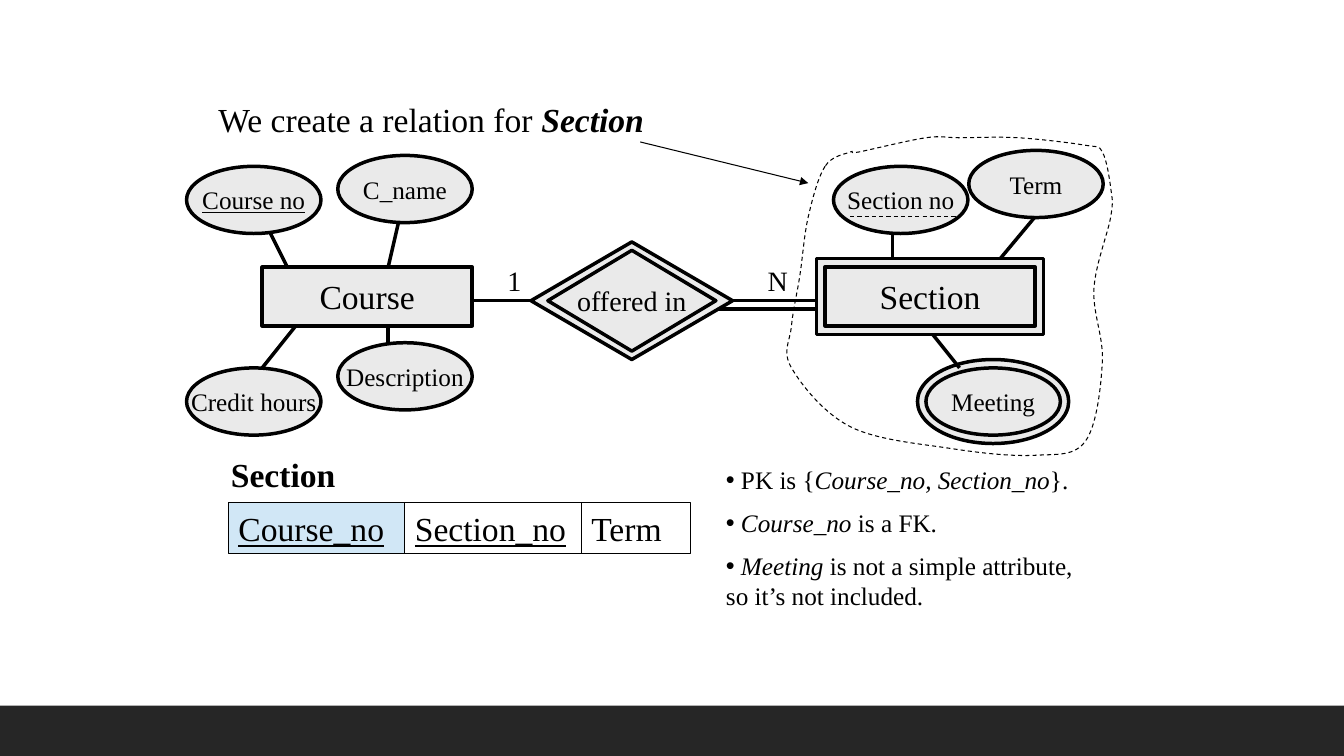
"""Build a slide that maps a weak entity type to a relation."""
from dataclasses import dataclass

from lxml.etree import SubElement
from pptx import Presentation
from pptx.dml.color import RGBColor
from pptx.enum.dml import MSO_LINE
from pptx.enum.shapes import MSO_CONNECTOR, MSO_SHAPE
from pptx.enum.text import MSO_ANCHOR, MSO_AUTO_SIZE, PP_ALIGN
from pptx.oxml.ns import qn
from pptx.util import Inches, Pt


@dataclass(frozen=True)
class Theme:
    """Colours, type sizes and line weights of the slide."""
    font: str = "Times New Roman"
    ink: RGBColor = RGBColor(0, 0, 0)
    node: RGBColor = RGBColor(0xEA, 0xEA, 0xEA)
    key: RGBColor = RGBColor(0xD1, 0xE7, 0xF6)
    bar: RGBColor = RGBColor(0x26, 0x26, 0x26)
    large: int = 24
    medium: int = 20
    small: int = 18
    heavy: float = 2.5
    thin: float = 0.75


THEME = Theme()
LEFT, TOP, CELLS_PER_INCH = 1.85, 1.65, 12
ENTITY, ATTRIBUTE, RELATIONSHIP = (25, 7), (16, 8), (20, 12)
BOUNDARY = [
    (76, 0), (74, 6), (73, 13), (72, 19), (72, 24), (79, 31), (91, 33.6),
    (101, 34.4), (107, 32.7), (109, 23.3), (108, 14.6), (110, 6), (110, 2.6),
    (109, -1.7), (107, -2.5), (99, -3.4), (92, -3.4), (88, -3.4), (80, -1.7),
    (79, -1.7),
]


def point(column, row):
    """Turn a grid position into slide lengths."""
    return Inches(LEFT + column / CELLS_PER_INCH), Inches(TOP + row / CELLS_PER_INCH)


def area(column, row, columns, rows):
    """Turn a grid rectangle into left, top, width and height."""
    return (*point(column, row),
            Inches(columns / CELLS_PER_INCH), Inches(rows / CELLS_PER_INCH))


def write(para, spans, size, align=PP_ALIGN.LEFT):
    """Fill a paragraph with (text, style letters) spans in one font."""
    para.alignment = align
    para.space_before = Pt(0)
    font = para.font
    font.name, font.size, font.color.rgb = THEME.font, Pt(size), THEME.ink
    for text, style in spans:
        span = para.add_run()
        span.text = text
        for letter, name in (("b", "bold"), ("i", "italic"), ("u", "underline")):
            if letter in style:
                setattr(span.font, name, True)


def wrap(box, anchor=MSO_ANCHOR.TOP):
    """Wrap the text of a box and anchor it."""
    frame = box.text_frame
    frame.word_wrap, frame.auto_size = True, MSO_AUTO_SIZE.NONE
    frame.vertical_anchor = anchor
    return frame


def place(box, bounds):
    """Move a placeholder to a grid rectangle."""
    box.left, box.top, box.width, box.height = area(*bounds)
    return wrap(box)


def paint(shape, fill, weight):
    """Give a shape a flat fill, or none, and a black outline."""
    shape.shadow.inherit = False
    if fill is None:
        shape.fill.background()
    else:
        shape.fill.solid()
        shape.fill.fore_color.rgb = fill
    shape.line.color.rgb, shape.line.width = THEME.ink, Pt(weight)


def add_label(page, bounds, text, size, style=""):
    """Add a free text label."""
    box = page.shapes.add_textbox(*area(*bounds))
    write(wrap(box).paragraphs[0], [(text, style)], size)


def add_node(page, kind, corner, extent, text, size, style="", double=(0, 0)):
    """Add a diagram node, with a wider outline behind it if it is double."""
    column, row = corner
    width, height = extent
    margins = [double, (0, 0)] if any(double) else [(0, 0)]
    for across, down in margins:
        node = page.shapes.add_shape(kind, *area(
            column - across, row - down, width + 2 * across, height + 2 * down))
        paint(node, THEME.node, THEME.heavy)
    frame = node.text_frame
    frame.word_wrap, frame.vertical_anchor = False, MSO_ANCHOR.MIDDLE
    write(frame.paragraphs[0], [(text, style)], size, PP_ALIGN.CENTER)


def add_link(page, start, end, weight=THEME.heavy, dashed=False, arrow=False):
    """Add a straight line between two grid points."""
    link = page.shapes.add_connector(MSO_CONNECTOR.STRAIGHT, *point(*start), *point(*end))
    link.line.color.rgb, link.line.width = THEME.ink, Pt(weight)
    if dashed:
        link.line.dash_style = MSO_LINE.DASH
    if arrow:
        SubElement(link.line._get_or_add_ln(), qn("a:tailEnd"), type="triangle")
    SubElement(link._element.spPr, qn("a:effectLst"))


def bend(outline):
    """Turn the segments of a closed outline into smooth curves."""
    geometry = outline._element.spPr
    knots = [(int(spot.get("x")), int(spot.get("y")))
             for spot in geometry.iter(qn("a:pt"))][:-1]
    count = len(knots)
    for index, segment in enumerate(list(geometry.iter(qn("a:lnTo")))):
        before, start, end, after = (
            knots[(index + shift) % count] for shift in (-1, 0, 1, 2))
        leave = [s + (e - b) / 6 for b, s, e in zip(before, start, end)]
        arrive = [e - (a - s) / 6 for s, e, a in zip(start, end, after)]
        curve = SubElement(segment.getparent(), qn("a:cubicBezTo"))
        for x, y in (leave, arrive, end):
            SubElement(curve, qn("a:pt"), x=str(round(x)), y=str(round(y)))
        segment.getparent().replace(segment, curve)


def add_boundary(page):
    """Add the dashed outline around the weak entity type."""
    first, *rest = [point(*knot) for knot in BOUNDARY]
    builder = page.shapes.build_freeform(*first)
    builder.add_line_segments([*rest, first], close=True)
    outline = builder.convert_to_shape()
    bend(outline)
    paint(outline, None, THEME.thin)
    outline.line.dash_style = MSO_LINE.DASH


def add_relation(page, corner, height, fields):
    """Add the relation schema as adjoining boxes, one for each field."""
    column, row = corner
    for text, width, style, colour in fields:
        field = page.shapes.add_shape(
            MSO_SHAPE.RECTANGLE, *area(column, row, width, height))
        paint(field, colour, THEME.thin)
        write(wrap(field, MSO_ANCHOR.BOTTOM).paragraphs[0], [(text, style)], THEME.large)
        column += width


def add_notes_list(box, items):
    """Fill the body placeholder with bulleted remarks."""
    frame = place(box, (63, 34.9, 46, 19.2))
    for index, spans in enumerate(items):
        para = frame.add_paragraph() if index else frame.paragraphs[0]
        properties = para._p.get_or_add_pPr()
        properties.set("marL", "0")
        properties.set("indent", "0")
        SubElement(properties, qn("a:buChar"), char="•")
        write(para, spans, THEME.small)
        para.space_before = Pt(9 if index else 0)


def add_bar(page, deck):
    """Add the dark band along the bottom of the slide."""
    height = deck.slide_height // 15
    bar = page.shapes.add_shape(MSO_SHAPE.RECTANGLE, 0, deck.slide_height - height,
                                deck.slide_width, height)
    paint(bar, THEME.bar, THEME.thin)
    bar.line.fill.background()


def add_diagram(page):
    """Add the entity-relationship diagram."""
    oval, small = MSO_SHAPE.OVAL, THEME.small
    for start, end in (((34, 16), (76, 16)), ((62, 17), (76, 17))):
        add_link(page, start, end)
    add_node(page, MSO_SHAPE.RECTANGLE, (9, 12), ENTITY, "Course", THEME.large)
    add_node(page, MSO_SHAPE.DIAMOND, (43, 10), RELATIONSHIP, "offered in",
             THEME.medium, double=(2, 1))
    for text, corner, style in (
            ("Section no", (77, 0), ""), ("Term", (93.1, -1.9), ""),
            ("Course no", (0, 0), "u"), ("C_name", (18, -1.3), ""),
            ("Credit hours", (0, 24), ""), ("Description", (18, 21), "")):
        add_node(page, oval, corner, ATTRIBUTE, text, small, style)
    add_node(page, oval, (88, 24), ATTRIBUTE, "Meeting", small, double=(1, 1))
    for start, end in (
            ((84, 8), (84, 12)), ((101, 6), (96, 12)), ((88, 19), (92, 24)),
            ((10, 8), (12, 12)), ((13, 19), (9, 24)), ((25.2, 6.8), (24, 12)),
            ((24, 19), (24, 21))):
        add_link(page, start, end)
    add_node(page, MSO_SHAPE.RECTANGLE, (76, 12), ENTITY, "Section", THEME.large,
             double=(1, 1))
    add_label(page, (37, 11, 4, 5.2), "1", THEME.medium)
    add_label(page, (68, 11, 6, 5.2), "N", THEME.medium)
    add_boundary(page)
    add_link(page, (54, -2.9), (74, 2), THEME.thin, arrow=True)
    add_link(page, (79, 6), (92, 6), THEME.thin, dashed=True)


def main():
    """Build and save the deck."""
    deck = Presentation()
    deck.slide_width, deck.slide_height = Inches(13.33), Inches(7.5)
    page = deck.slides.add_slide(deck.slide_layouts[1])
    add_bar(page, deck)
    heading = place(page.shapes.title, (2.6, -8.6, 99, 6))
    write(heading.paragraphs[0],
          [("We create a relation for ", ""), ("Section", "bi")], THEME.large)
    add_diagram(page)
    add_label(page, (4.1, 33.6, 26, 6), "Section", THEME.large, "b")
    add_relation(page, (5, 40), 6.1, [
        ("Course_no", 21, "u", THEME.key), ("Section_no", 21, "u", None),
        ("Term", 13, "", None)])
    add_notes_list(page.placeholders[1], [
        [(" PK is {", ""), ("Course_no, Section_no", "i"), ("}.", "")],
        [(" Course_no", "i"), (" is a FK.", "")],
        [(" Meeting", "i"), (" is not a simple attribute, so it’s not included.", "")]])
    deck.save("out.pptx")


if __name__ == "__main__":
    main()
